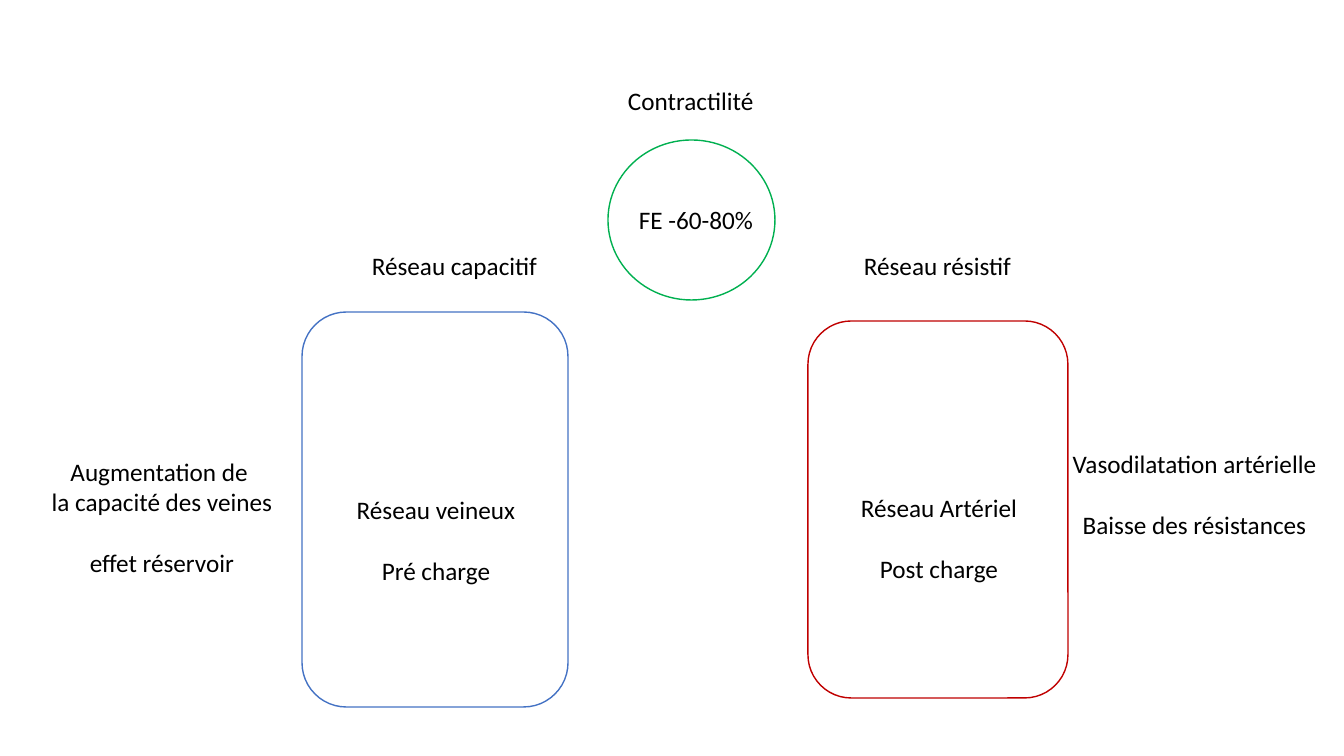
from pptx import Presentation
from pptx import util as u
from pptx.dml.color import RGBColor
from pptx.enum import shapes, text

HUE = {"white": "FFFFFF", "black": "000000", "green": "00B050",
       "blue": "4472C4", "red": "C00000"}
KIND = shapes.MSO_SHAPE
LEFT, MID = text.PP_ALIGN.LEFT, text.PP_ALIGN.CENTER
FRAME = {"word_wrap": False, "auto_size": text.MSO_AUTO_SIZE.NONE,
         "margin_left": u.Inches(0.1), "margin_right": u.Inches(0.1),
         "margin_top": u.Inches(0.05), "margin_bottom": u.Inches(0.05)}
FONT = {"name": "Calibri", "size": u.Pt(18)}
GAP = u.Pt(22)


def px(*nums):
    return [round(n * 914400 / 100.8) for n in nums]


def style(item, form):
    for key, value in form.items():
        setattr(item, key, value)


deck = Presentation()
deck.slide_width, deck.slide_height = px(1344, 756)
slide = deck.slides.add_slide(deck.slide_layouts[6])

outlines = [
    (KIND.OVAL, "green", (608, 140, 167, 160)),
    (KIND.ROUNDED_RECTANGLE, "blue", (302, 312, 266, 395)),
    (KIND.ROUNDED_RECTANGLE, "red", (808, 321, 260, 377)),
]
for kind, hue, box in outlines:
    organ = slide.shapes.add_shape(kind, *px(*box))
    organ.shadow.inherit = False
    organ.fill.solid()
    organ.fill.fore_color.rgb = RGBColor.from_string(HUE["white"])
    organ.line.color.rgb = RGBColor.from_string(HUE[hue])
    organ.line.width = u.Pt(1)

labels = [
    ((854, 245, 169, 40), LEFT, [["Réseau résistif"]]),
    ((362, 245, 187, 40), LEFT, [["Réseau capacitif"]]),
    ((346, 489, 180, 102), MID, [["Réseau veineux"], ["Pré charge"]]),
    ((850, 487, 178, 102), MID, [["Réseau Artériel"], ["Post charge"]]),
    ((629, 199, 135, 40), LEFT, [["FE -60-80%"]]),
    ((618, 80, 147, 40), LEFT, [["Contractilité"]]),
    ((40, 451, 244, 132), MID,
     [["Augmentation de ", "la capacité des veines"], ["effet réservoir"]]),
    ((1061, 443, 267, 102), MID,
     [["Vasodilatation artérielle"], ["Baisse des résistances"]]),
]
for box, align, groups in labels:
    frame = slide.shapes.add_textbox(*px(*box)).text_frame
    style(frame, FRAME)
    frame.text = "\n".join(line for group in groups for line in group)
    for para in frame.paragraphs:
        para.alignment = align
        style(para.runs[0].font, FONT)
        para.runs[0].font.color.rgb = RGBColor.from_string(HUE["black"])
    if len(groups) > 1:
        frame.paragraphs[len(groups[0])].space_before = GAP

deck.save("out.pptx")
